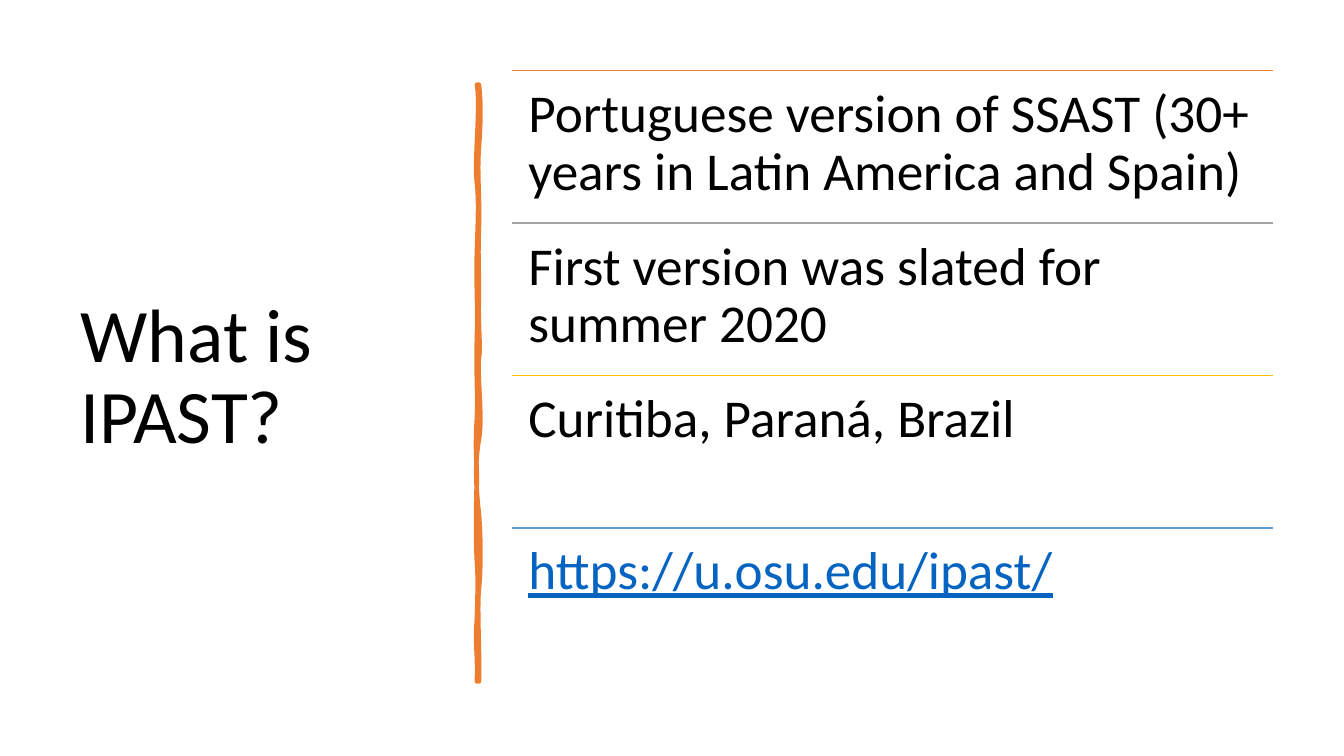
from dataclasses import dataclass

from lxml import etree
from pptx import Presentation, util as u
from pptx.dml.color import RGBColor
from pptx.enum import shapes, text
from pptx.oxml.ns import qn

FONT = "Calibri"
ORANGE = "ED7D31"
ROW_LEFT, ROW_TOP, ROW_WIDTH, ROWS_HEIGHT = 5.08, 0.7, 7.55, 6.05


@dataclass
class Row:
    wording: str
    rule_color: str
    text_color: str = "000000"
    underline: bool = False


ROWS = [
    Row("Portuguese version of SSAST (30+ years in Latin America and Spain)", ORANGE),
    Row("First version was slated for summer 2020", "A5A5A5"),
    Row("Curitiba, Paraná, Brazil", "FFC000"),
    Row("https://u.osu.edu/ipast/", "5B9BD5", "0563C1", True),
]

BRUSH_CURVE = [
    (4.75, 0.84), (4.77, 1.02), (4.77, 1.19), (4.75, 1.46),
    (4.73, 1.73), (4.76, 1.95), (4.75, 2.26),
    (4.74, 2.57), (4.75, 2.62), (4.75, 2.94),
    (4.74, 3.25), (4.77, 3.42), (4.75, 3.56),
    (4.73, 3.7), (4.79, 4.14), (4.75, 4.36),
    (4.71, 4.57), (4.72, 4.84), (4.75, 5.1),
    (4.77, 5.36), (4.77, 5.64), (4.75, 5.84),
    (4.73, 6.03), (4.76, 6.5), (4.75, 6.76),
    (4.74, 6.76), (4.73, 6.76), (4.73, 6.76),
    (4.74, 6.46), (4.71, 6.44), (4.73, 6.13),
    (4.74, 5.83), (4.74, 5.7), (4.73, 5.57),
    (4.72, 5.44), (4.72, 4.95), (4.73, 4.77),
    (4.73, 4.59), (4.71, 4.45), (4.73, 4.15),
    (4.74, 3.86), (4.72, 3.73), (4.73, 3.35),
    (4.74, 2.98), (4.72, 2.81), (4.73, 2.5),
    (4.74, 2.18), (4.75, 2.0), (4.73, 1.81),
    (4.7, 1.63), (4.77, 1.04), (4.73, 0.84),
    (4.74, 0.84), (4.74, 0.84), (4.75, 0.84),
]


def rgb(color: str) -> RGBColor:
    return RGBColor.from_string(color)


def write_text(frame, wording: str, *, size: float, color: str = "000000",
               underline: bool = False, inset: float = 0.1,
               anchor=text.MSO_ANCHOR.TOP) -> None:
    frame.word_wrap = True
    frame.auto_size = text.MSO_AUTO_SIZE.NONE
    frame.vertical_anchor = anchor
    frame.margin_left = frame.margin_right = u.Inches(inset)
    frame.margin_top = frame.margin_bottom = u.Inches(inset)
    paragraph = frame.paragraphs[0]
    paragraph.alignment = text.PP_ALIGN.LEFT
    paragraph.line_spacing = 0.9
    run = paragraph.add_run()
    run.text = wording
    run.font.name = FONT
    run.font.size = u.Pt(size)
    run.font.color.rgb = rgb(color)
    if underline:
        run.font.underline = True


def add_title(slide, wording: str) -> None:
    title = slide.shapes.title
    title.left, title.top = u.Inches(0.7), u.Inches(0.7)
    title.width, title.height = u.Inches(3.74), u.Inches(6.11)
    write_text(title.text_frame, wording, size=54, anchor=text.MSO_ANCHOR.MIDDLE)


def bend_segments(shape) -> None:
    segments = list(shape._element.iter(qn("a:lnTo")))
    for first in range(0, len(segments), 3):
        curve = etree.Element(qn("a:cubicBezTo"))
        segments[first].addprevious(curve)
        for segment in segments[first:first + 3]:
            curve.append(segment[0])
            segment.getparent().remove(segment)


def add_brush_stroke(slide) -> None:
    start, *controls = [(u.Inches(x), u.Inches(y)) for x, y in BRUSH_CURVE]
    builder = slide.shapes.build_freeform(*start)
    builder.add_line_segments(controls, close=True)
    brush = builder.convert_to_shape()
    bend_segments(brush)
    brush.shadow.inherit = False
    brush.fill.solid()
    brush.fill.fore_color.rgb = rgb(ORANGE)
    brush.line.color.rgb = rgb(ORANGE)
    brush.line.width = u.Pt(3.25)
    outline = brush.line._get_or_add_ln()
    outline.set("cap", "rnd")
    etree.SubElement(outline, qn("a:round"))


def add_row(slide, row: Row, top: float, height: float) -> None:
    left, y, width = u.Inches(ROW_LEFT), u.Inches(top), u.Inches(ROW_WIDTH)
    rule = slide.shapes.add_connector(shapes.MSO_CONNECTOR.STRAIGHT, left, y, left + width, y)
    rule.line.color.rgb = rgb(row.rule_color)
    rule.line.width = u.Pt(1)
    etree.SubElement(rule._element.spPr, qn("a:effectLst"))
    box = slide.shapes.add_textbox(left, y, width, u.Inches(height))
    write_text(box.text_frame, row.wording, size=38, color=row.text_color,
               underline=row.underline, inset=0.16)


def main() -> None:
    presentation = Presentation()
    presentation.slide_width = u.Inches(13.33)
    presentation.slide_height = u.Inches(7.5)
    slide = presentation.slides.add_slide(presentation.slide_layouts[5])
    add_title(slide, "What is IPAST?")
    add_brush_stroke(slide)
    row_height = ROWS_HEIGHT / len(ROWS)
    for index, row in enumerate(ROWS):
        add_row(slide, row, ROW_TOP + index * row_height, row_height)
    presentation.save("out.pptx")


if __name__ == "__main__":
    main()
